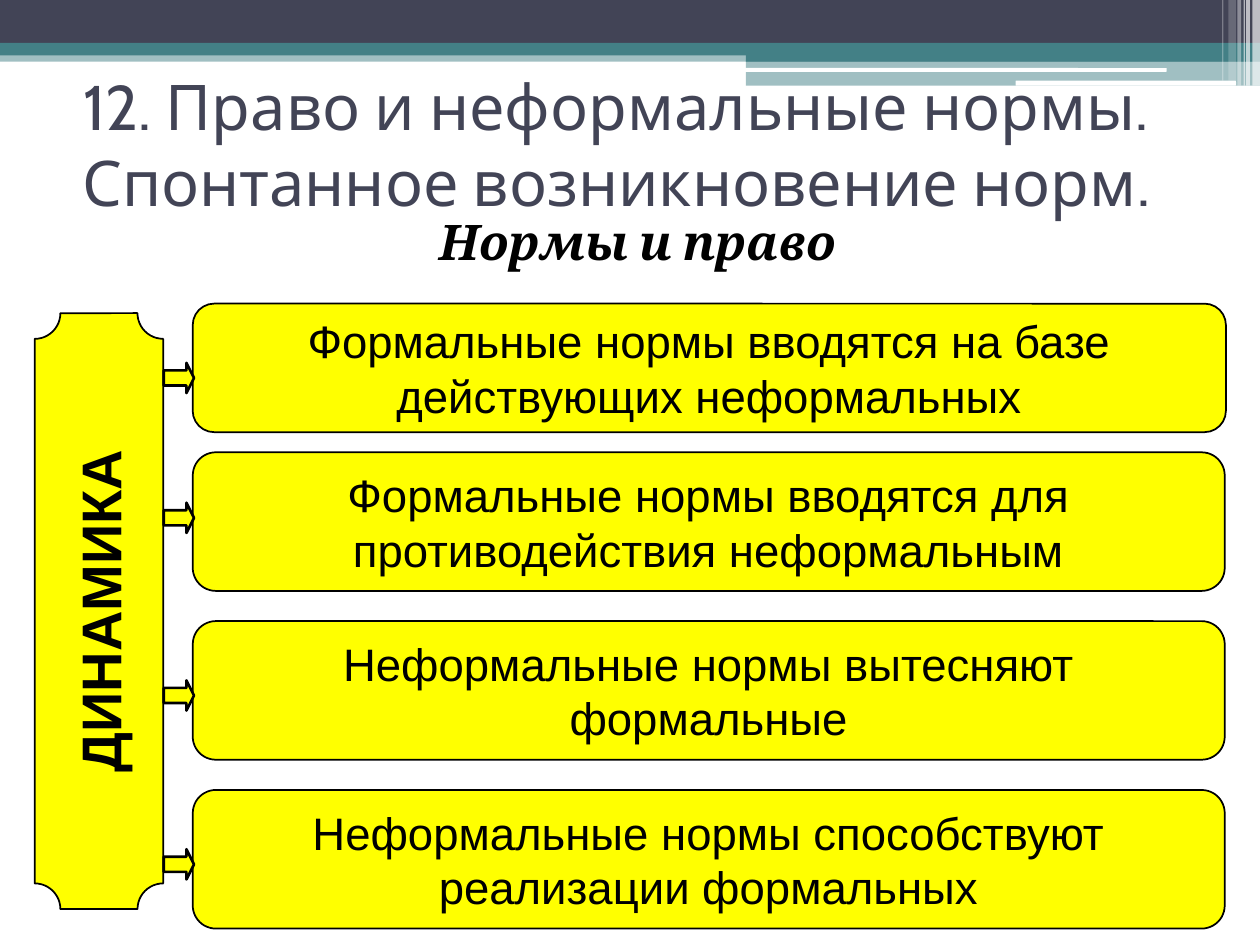
from dataclasses import dataclass
from typing import NamedTuple, Optional

import pptx
import pptx.dml.color
import pptx.enum.shapes
import pptx.enum.text
import pptx.oxml.ns
import pptx.util
from lxml import etree

Preset = pptx.enum.shapes.MSO_SHAPE
Align = pptx.enum.text.PP_ALIGN
Anchor = pptx.enum.text.MSO_ANCHOR

# The slide is a grid of 100 columns by 75 rows
COLUMNS, ROWS = 100, 75
CELL = pptx.util.Inches(0.1)


@dataclass(frozen=True)
class Theme:
    dark: str = "424456"
    teal: str = "438086"
    white: str = "FFFFFF"
    yellow: str = "FFFF00"
    black: str = "000000"
    title_font: str = "Cabin"
    subtitle_font: str = "Cambria"
    body_font: str = "Arial"
    title_size: int = 36
    label_size: int = 32
    subtitle_size: int = 28
    body_size: int = 26


class Place(NamedTuple):
    column: float
    row: float
    columns: float
    rows: float

    def lengths(self) -> list:
        return [pptx.util.Emu(round(cells * CELL)) for cells in self]


class Band(NamedTuple):
    place: Place
    color: str
    opacity: int = 100
    preset: Preset = Preset.RECTANGLE


class Statement(NamedTuple):
    text: str
    row: float
    columns: float
    rows: float
    arrow_row: float


THEME = Theme()

BANDS = [
    Band(Place(0, 4, COLUMNS, 0.9), THEME.teal, 50),
    Band(Place(0, 0, COLUMNS, 3.4), THEME.dark),
    Band(Place(0, 3.4, COLUMNS, 1), THEME.teal),
    Band(Place(59.2, 3.9, 40.8, 1), THEME.teal),
    Band(Place(59.2, 4.8, 40.8, 2), THEME.teal, 50),
    Band(Place(59.1, 5.4, 33.5, 0.3), THEME.white, 100, Preset.ROUNDED_RECTANGLE),
    Band(Place(80.6, 6.4, 17.5, 0.4), THEME.white, 100, Preset.ROUNDED_RECTANGLE),
] + [
    Band(Place(column, 0, columns, rows), THEME.white, opacity)
    for column, columns, rows, opacity in [
        (99.4, 0.6, 6.8, 65), (98.9, 0.3, 6.8, 65), (98.7, 0.1, 6.8, 60),
        (98.2, 0.3, 6.8, 40), (97.5, 0.6, 6.4, 20), (97, 0.1, 6.4, 30),
    ]
]

STATEMENTS = [
    Statement("Формальные нормы вводятся на базе действующих неформальных",
              24.1, 82, 10.2, 28.8),
    Statement("Формальные нормы вводятся для противодействия неформальным",
              35.9, 81.9, 11, 39.9),
    Statement("Неформальные нормы вытесняют формальные",
              49.3, 81.9, 11, 54),
    Statement("Неформальные нормы способствуют реализации формальных",
              62.7, 81.9, 11, 67.4),
]


def rgb(color: str) -> pptx.dml.color.RGBColor:
    return pptx.dml.color.RGBColor.from_string(color)


def add_figure(page, preset: Preset, place: Place, color: str,
               opacity: int = 100, line_width: Optional[float] = None):
    figure = page.shapes.add_shape(preset, *place.lengths())
    figure.shadow.inherit = False
    figure.fill.solid()
    figure.fill.fore_color.rgb = rgb(color)
    if opacity < 100:
        tint = figure.element.spPr.find(".//" + pptx.oxml.ns.qn("a:srgbClr"))
        etree.SubElement(tint, pptx.oxml.ns.qn("a:alpha"), val=str(opacity * 1000))
    if line_width is None:
        figure.line.fill.background()
    else:
        figure.line.color.rgb = rgb(THEME.black)
        figure.line.width = pptx.util.Pt(line_width)
    return figure


def write(box, text: str, font: str, size: int, color: str = THEME.black,
          bold: bool = False, italic: bool = False, wrap: bool = True,
          anchor: Anchor = Anchor.MIDDLE):
    frame = box.text_frame
    frame.word_wrap = wrap
    frame.vertical_anchor = anchor
    frame.text = text
    para = frame.paragraphs[0]
    para.alignment = Align.CENTER
    para.font.name = font
    para.font.size = pptx.util.Pt(size)
    para.font.bold = bold
    para.font.italic = italic
    para.font.color.rgb = rgb(color)
    return para


def add_label(page) -> None:
    plaque = add_figure(page, Preset.PLAQUE, Place(-15.8, 43.4, 47.3, 10.2),
                        THEME.yellow, line_width=1)
    plaque.adjustments[0] = 0.2
    plaque.rotation = 270
    write(plaque, "ДИНАМИКА", THEME.body_font, THEME.label_size,
          bold=True, wrap=False)


def add_statement(page, statement: Statement) -> None:
    place = Place(15.3, statement.row, statement.columns, statement.rows)
    box = add_figure(page, Preset.ROUNDED_RECTANGLE, place,
                     THEME.yellow, line_width=1)
    write(box, statement.text, THEME.body_font, THEME.body_size)


def add_arrow(page, row: float) -> None:
    arrow = add_figure(page, Preset.RIGHT_ARROW, Place(13, row, 2.4, 2.4),
                       THEME.yellow, line_width=1.5)
    arrow.adjustments[1] = 0.25


def add_headings(page) -> None:
    title = page.shapes.title
    title.left, title.top, title.width, title.height = Place(3.9, 5.5, 90, 11.7).lengths()
    write(title, "12. Право и неформальные нормы. Спонтанное возникновение норм.",
          THEME.title_font, THEME.title_size, THEME.dark)
    # Bring the title in front of the bands
    title.element.getparent().append(title.element)

    subtitle = page.shapes.add_textbox(*Place(5, 17.2, 90, 5.4).lengths())
    para = write(subtitle, "Нормы и право", THEME.subtitle_font, THEME.subtitle_size,
                 bold=True, italic=True, anchor=Anchor.TOP)
    para.line_spacing = 0.8
    para.space_before = pptx.util.Pt(12)
    indents = para._p.get_or_add_pPr()
    indents.set("marL", str(pptx.util.Inches(0.4)))
    indents.set("indent", str(pptx.util.Inches(-0.28)))


def main() -> None:
    deck = pptx.Presentation()
    deck.slide_width, deck.slide_height = COLUMNS * CELL, ROWS * CELL
    page = deck.slides.add_slide(deck.slide_layouts[5])

    # Header decoration
    for band in BANDS:
        add_figure(page, band.preset, band.place, band.color, band.opacity)

    # Diagram
    add_label(page)
    for statement in STATEMENTS:
        add_statement(page, statement)
    for statement in STATEMENTS:
        add_arrow(page, statement.arrow_row)

    add_headings(page)
    deck.save("out.pptx")


if __name__ == "__main__":
    main()
